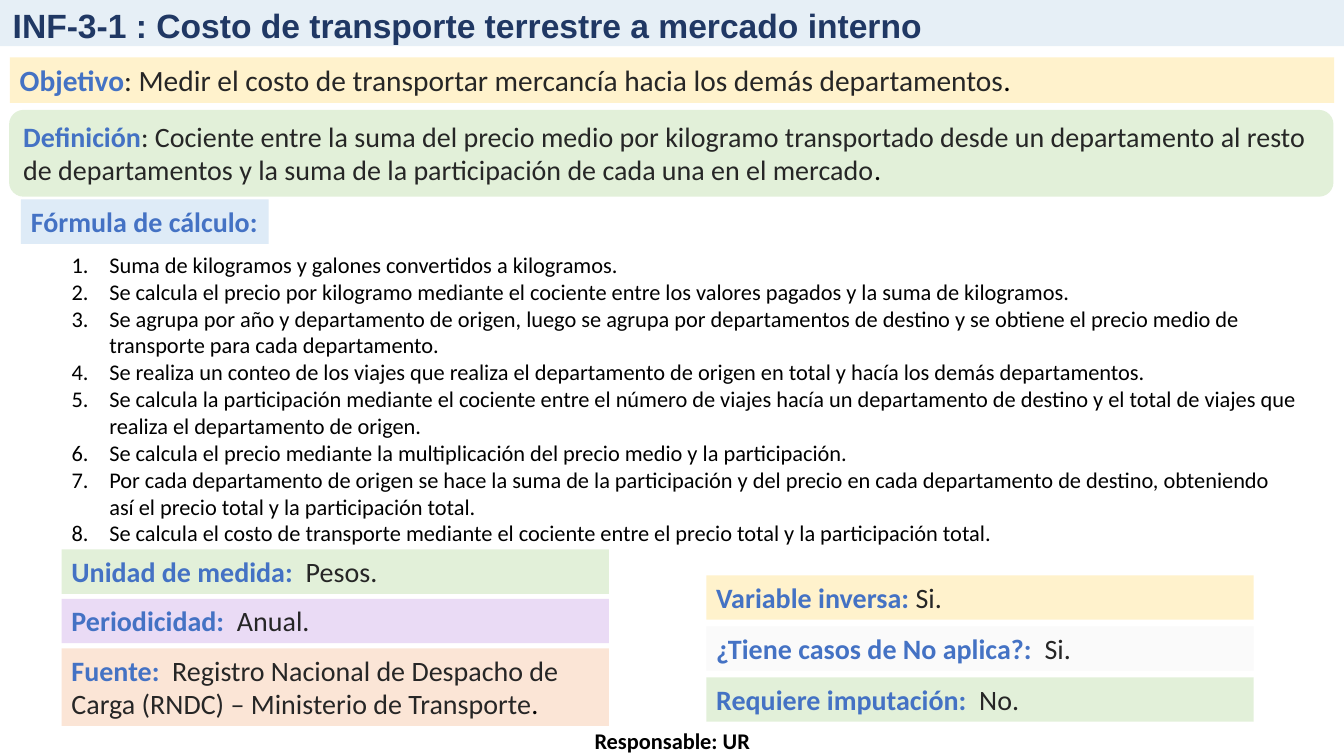
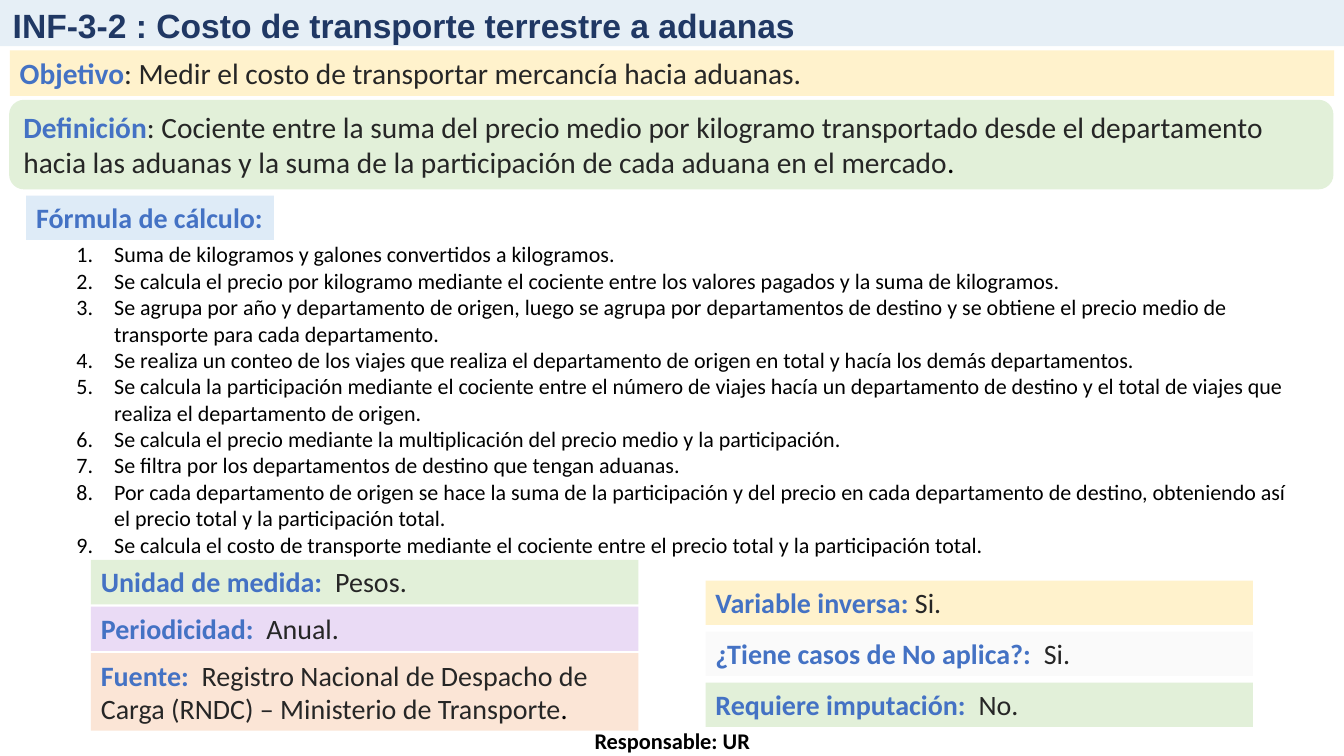
import pptx
import pptx.dml.color
import pptx.enum.shapes
import pptx.enum.text
import pptx.oxml
import pptx.oxml.ns
import pptx.util

Pt = pptx.util.Pt
RGBColor = pptx.dml.color.RGBColor
Shape = pptx.enum.shapes.MSO_SHAPE
Align = pptx.enum.text.PP_ALIGN
Anchor = pptx.enum.text.MSO_ANCHOR
AutoSize = pptx.enum.text.MSO_AUTO_SIZE

# Colours
BAND = RGBColor(0x11, 0x6A, 0xAF)
NAVY = RGBColor(0x20, 0x38, 0x64)
BLUE = RGBColor(0x44, 0x72, 0xC4)
DARK = RGBColor(0x26, 0x26, 0x26)
BLACK = RGBColor(0x00, 0x00, 0x00)
GREEN = RGBColor(0xE2, 0xF0, 0xD9)
YELLOW = RGBColor(0xFF, 0xF2, 0xCC)
ORANGE = RGBColor(0xFB, 0xE5, 0xD6)
PALE_BLUE = RGBColor(0xDE, 0xEB, 0xF7)
PURPLE = RGBColor(0xEA, 0xDB, 0xF5)
GREY = RGBColor(0xFA, 0xFA, 0xFA)

# Text formats
TITLE = {"name": "Arial", "size": Pt(24), "bold": True}
LABEL = {"name": "Calibri", "size": Pt(20), "bold": True}
BODY = LABEL | {"bold": False}
STEP = BODY | {"size": Pt(16)}
FOOTER = STEP | {"bold": True}

# Lengths in points
SLIDE_WIDTH, SLIDE_HEIGHT = 960, 540
WIDE = 946
CARD_WIDTH, CARD_HEIGHT, TALL_CARD = 391, 31.7, 55.4
INDENT = 27

# Cards: label, value, closing mark, fill, height
LEFT_CARDS = [
    ("Unidad de medida:", "  Pesos.", "", GREEN, CARD_HEIGHT),
    ("Periodicidad:", "  Anual.", "", PURPLE, CARD_HEIGHT),
    ("Fuente:", "  Registro Nacional de Despacho de Carga (RNDC) – Ministerio de Transporte",
     ".", ORANGE, TALL_CARD),
]
RIGHT_CARDS = [
    ("Variable inversa:", " Si.", "", YELLOW, CARD_HEIGHT),
    ("¿Tiene casos de No aplica?:", "  Si.", "", GREY, CARD_HEIGHT),
    ("Requiere imputación:", "  No.", "", GREEN, CARD_HEIGHT),
]

# Calculation steps
STEPS = [
    "Suma de kilogramos y galones convertidos a kilogramos.",
    "Se calcula el precio por kilogramo mediante el cociente entre los valores pagados y la suma de kilogramos.",
    "Se agrupa por año y departamento de origen, luego se agrupa por departamentos de destino y se obtiene "
    "el precio medio de transporte para cada departamento.",
    "Se realiza un conteo de los viajes que realiza el departamento de origen en total y hacía los demás "
    "departamentos.",
    "Se calcula la participación mediante el cociente entre el número de viajes hacía un departamento de "
    "destino y el total de viajes que realiza el departamento de origen.",
    "Se calcula el precio mediante la multiplicación del precio medio y la participación.",
    "Por cada departamento de origen se hace la suma de la participación y del precio en cada departamento "
    "de destino, obteniendo así el precio total y la participación total.",
    "Se calcula el costo de transporte mediante el cociente entre el precio total y la participación total.",
]
CUSTOMS_STEP = "Se filtra por los departamentos de destino que tengan aduanas."


class Deck:
    def __init__(self):
        self.presentation = pptx.Presentation()
        self.presentation.slide_width = Pt(SLIDE_WIDTH)
        self.presentation.slide_height = Pt(SLIDE_HEIGHT)
        self.slide = None

    def add_slide(self, title):
        """Start a slide with its band, title and footer."""
        self.slide = self.presentation.slides.add_slide(self.presentation.slide_layouts[6])
        band = self.block((0, 0, SLIDE_WIDTH, 33), BAND)
        color = band.fill._xPr.find(".//" + pptx.oxml.ns.qn("a:srgbClr"))
        pptx.oxml.ns.qn("a:alpha")
        color.append(pptx.oxml.parse_xml(
            f'<a:alpha {pptx.oxml.ns.nsdecls("a")} val="10000"/>'))

        frame = self.text_box((2, 0, 909, 39.6), AutoSize.NONE)
        frame.vertical_anchor = Anchor.MIDDLE
        frame.paragraphs[0].line_spacing = 0.9
        self.run(frame.paragraphs[0], title, TITLE, NAVY)

        frame = self.text_box((401, 515.5, 158.4, 24.5), AutoSize.NONE)
        frame.paragraphs[0].alignment = Align.CENTER
        self.run(frame.paragraphs[0], "Responsable: UR", FOOTER, BLACK)

    def block(self, box, fill, kind=Shape.RECTANGLE):
        shape = self.slide.shapes.add_shape(kind, *map(Pt, box))
        shape.shadow.inherit = False
        shape.fill.solid()
        shape.fill.fore_color.rgb = fill
        shape.line.fill.background()
        return shape

    def text_box(self, box, auto_size=AutoSize.SHAPE_TO_FIT_TEXT):
        frame = self.slide.shapes.add_textbox(*map(Pt, box)).text_frame
        frame.word_wrap = True
        frame.auto_size = auto_size
        return frame

    def run(self, paragraph, text, style, color):
        run = paragraph.add_run()
        run.text = text
        for name, value in style.items():
            setattr(run.font, name, value)
        run.font.color.rgb = color

    def card(self, box, fill, label, value="", mark="", size=20, kind=Shape.RECTANGLE):
        """Coloured block with a bold label, its value and a black closing mark."""
        frame = self.block(box, fill, kind).text_frame
        frame.word_wrap = True
        frame.auto_size = AutoSize.SHAPE_TO_FIT_TEXT
        frame.vertical_anchor = Anchor.TOP
        paragraph = frame.paragraphs[0]
        paragraph.alignment = Align.LEFT
        parts = [(label, LABEL, BLUE), (value, BODY, DARK), (mark, BODY, BLACK)]
        for text, style, color in parts:
            if text:
                self.run(paragraph, text, style | {"size": Pt(size)}, color)

    def card_column(self, left, top, step, cards):
        for index, (label, value, mark, fill, height) in enumerate(cards):
            box = (left, top + index * step, CARD_WIDTH, height)
            self.card(box, fill, label, value, mark)

    def numbered_list(self, box, items, size):
        frame = self.text_box(box)
        for index, item in enumerate(items):
            paragraph = frame.add_paragraph() if index else frame.paragraphs[0]
            properties = paragraph._p.get_or_add_pPr()
            properties.set("marL", str(Pt(INDENT)))
            properties.set("indent", str(-Pt(INDENT)))
            properties.append(pptx.oxml.parse_xml(
                f'<a:buAutoNum {pptx.oxml.ns.nsdecls("a")} type="arabicPeriod"/>'))
            self.run(paragraph, item, STEP | {"size": Pt(size)}, BLACK)


def main():
    deck = Deck()

    # Domestic market
    deck.add_slide("INF-3-1 : Costo de transporte terrestre a mercado interno")
    deck.card((6.5, 78.5, WIDE, 62), GREEN, "Definición",
              ": Cociente entre la suma del precio medio por kilogramo transportado desde un departamento al "
              "resto de departamentos y la suma de la participación de cada una en el mercado",
              ".", kind=Shape.ROUNDED_RECTANGLE)
    deck.card((15, 142.5, 177, CARD_HEIGHT), PALE_BLUE, "Fórmula de cálculo:")
    deck.card((7, 41, WIDE, 32.5), YELLOW, "Objetivo",
              ": Medir el costo de transportar mercancía hacia los demás departamentos", ".", size=21)
    deck.card_column(44, 392.5, 35.3, LEFT_CARDS)
    deck.card_column(504.5, 411, 36.4, RIGHT_CARDS)
    deck.numbered_list((44, 175.7, 890, 220), STEPS, 16)

    # Customs
    deck.add_slide("INF-3-2 : Costo de transporte terrestre a aduanas")
    deck.card((6.5, 71.3, WIDE, 64), GREEN, "Definición",
              ": Cociente entre la suma del precio medio por kilogramo transportado desde el departamento "
              "hacia las aduanas y la suma de la participación de cada aduana en el mercado",
              ".", size=21, kind=Shape.ROUNDED_RECTANGLE)
    deck.card((18.7, 139.7, 177, CARD_HEIGHT), PALE_BLUE, "Fórmula de cálculo:")
    deck.card((7, 36, WIDE, 32.5), YELLOW, "Objetivo",
              ": Medir el costo de transportar mercancía hacia aduanas.", size=21)
    deck.card_column(65, 400, 33.3, LEFT_CARDS)
    deck.card_column(504, 414.8, 36.4, RIGHT_CARDS)
    deck.numbered_list((47.5, 168.5, 882.7, 240), STEPS[:6] + [CUSTOMS_STEP] + STEPS[6:], 15.7)

    deck.presentation.save("out.pptx")


if __name__ == "__main__":
    main()
